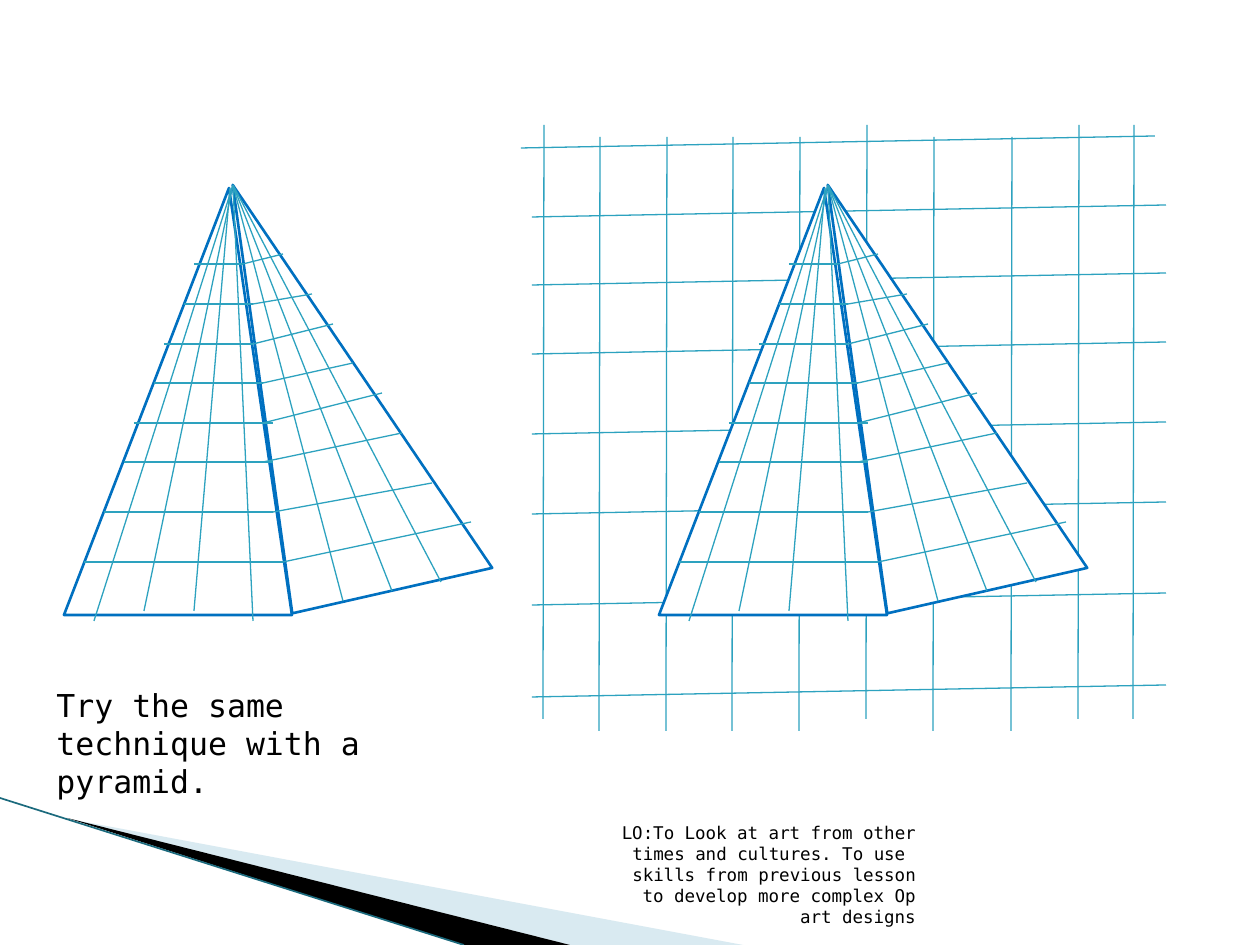
from lxml import etree
from pptx import Presentation
from pptx.dml.color import RGBColor
from pptx.enum.shapes import MSO_CONNECTOR, MSO_SHAPE
from pptx.enum.text import MSO_ANCHOR, MSO_AUTO_SIZE, PP_ALIGN
from pptx.oxml.ns import qn
from pptx.util import Pt

LINE = MSO_CONNECTOR.STRAIGHT
TRIANGLE = MSO_SHAPE.ISOSCELES_TRIANGLE
TOP, BOTTOM = MSO_ANCHOR.TOP, MSO_ANCHOR.BOTTOM
LEFT, RIGHT = PP_ALIGN.LEFT, PP_ALIGN.RIGHT
GROW, FIXED = MSO_AUTO_SIZE.SHAPE_TO_FIT_TEXT, MSO_AUTO_SIZE.NONE

PX = 914400 / 126
FONT = "DejaVu Sans Mono"
COLORS = {
    "white": "FFFFFF",
    "black": "000000",
    "blue": "0070C0",
    "teal": "2DA2BF",
    "pale": "A0CBDC",
    "edge": "1B6A7D",
}
RGB = {name: RGBColor.from_string(code) for name, code in COLORS.items()}

# Foot and tip of each line that fans out from the apex
FAN = [
    (94, 621, 233, 185), (144, 611, 233, 185), (194, 611, 230, 188),
    (253, 621, 233, 185), (343, 601, 233, 185), (392, 591, 233, 185),
    (441, 582, 233, 185),
]
# Height, left and right of each front row, then start and end of its side row
ROWS = [
    (562, 84, 283, 283, 471, 522),
    (512, 104, 273, 273, 432, 483),
    (462, 124, 273, 263, 402, 433),
    (423, 134, 273, 263, 382, 393),
    (383, 154, 263, 263, 353, 363),
    (344, 164, 253, 253, 333, 324),
    (304, 184, 253, 253, 312, 294),
    (264, 194, 243, 243, 283, 254),
]
# Left, top, width, height, turn and apex position of each face
FACES = [
    (64, 188, 228, 427, 0, 0.724),
    (242, 165, 205, 431, 347.2, 0.18),
]


def add_line(shapes, x1, y1, x2, y2, color="teal", width=0.75):
    ends = [round(v * PX) for v in (x1, y1, x2, y2)]
    line = shapes.add_connector(LINE, *ends)
    line.line.color.rgb = RGB[color]
    line.line.width = Pt(width)
    etree.SubElement(line._element.spPr, qn("a:effectLst"))


def add_pyramid(shapes, dx):
    """Draw both faces and their mesh, moved right by dx."""
    for x, y, w, h, turn, apex in FACES:
        box = [round(v * PX) for v in (x + dx, y, w, h)]
        face = shapes.add_shape(TRIANGLE, *box)
        face.shadow.inherit = False
        face.adjustments[0] = apex
        face.rotation = turn
        face.fill.solid()
        face.fill.fore_color.rgb = RGB["white"]
        face.line.color.rgb = RGB["blue"]
        face.line.width = Pt(1.5)
    for x1, y1, x2, y2 in FAN:
        add_line(shapes, x1 + dx, y1, x2 + dx, y2)
    for y, left, right, start, end, rise in ROWS:
        add_line(shapes, left + dx, y, right + dx, y)
        add_line(shapes, start + dx, y, end + dx, rise)


prs = Presentation()
prs.slide_width = round(1260 * PX)
prs.slide_height = round(945 * PX)
slide = prs.slides.add_slide(prs.slide_layouts[6])

# Corner sweep
SWEEPS = [
    ("pale", [(69, 819), (743, 945), (570, 945)]),
    ("black", [(67, 818), (570, 945), (463, 945)]),
]
for color, points in SWEEPS:
    pen = slide.shapes.build_freeform(*points[0], scale=PX)
    pen.add_line_segments(points[1:])
    sweep = pen.convert_to_shape()
    sweep.shadow.inherit = False
    sweep.fill.solid()
    sweep.fill.fore_color.rgb = RGB[color]
    sweep.line.fill.background()
    if color == "pale":
        tint = sweep._element.spPr.find(".//" + qn("a:srgbClr"))
        etree.SubElement(tint, qn("a:alpha"), val="40000")
add_line(slide.shapes, 0, 798, 464, 945, "edge", 0.95)

# Pyramid alone
alone = slide.shapes.add_group_shape()
add_pyramid(alone.shapes, 0)

# Pyramid in front of a grid
scene = slide.shapes.add_group_shape()
for y in (148, 217, 285, 354, 434, 514, 605, 697):
    x = 521 if y == 148 else 532
    add_line(scene.shapes, x, y, x + 634, y - 12)
for x in (544, 600, 667, 733, 800, 867, 934, 1012, 1079, 1134):
    y = 125 if x in (544, 867, 1079, 1134) else 137
    add_line(scene.shapes, x, y, x - 1, y + 594)
add_pyramid(scene.shapes, 595)

# Texts
TEXTS = [
    ("Try the same technique with a pyramid.",
     (44, 680, 407, 89), 18, LEFT, TOP, GROW),
    ("LO:To Look at art from other times and cultures. To use  skills "
     "from previous lesson to develop more complex Op art designs",
     (604, 883, 324, 50), 10, RIGHT, BOTTOM, FIXED),
]
for words, place, size, align, anchor, fit in TEXTS:
    box = slide.shapes.add_textbox(*[round(v * PX) for v in place])
    frame = box.text_frame
    frame.word_wrap = True
    frame.auto_size = fit
    frame.vertical_anchor = anchor
    para = frame.paragraphs[0]
    para.alignment = align
    run = para.add_run()
    run.text = words
    style = {"name": FONT, "size": Pt(size)}
    for key, value in style.items():
        setattr(run.font, key, value)
    run.font.color.rgb = RGB["black"]

prs.save("out.pptx")
